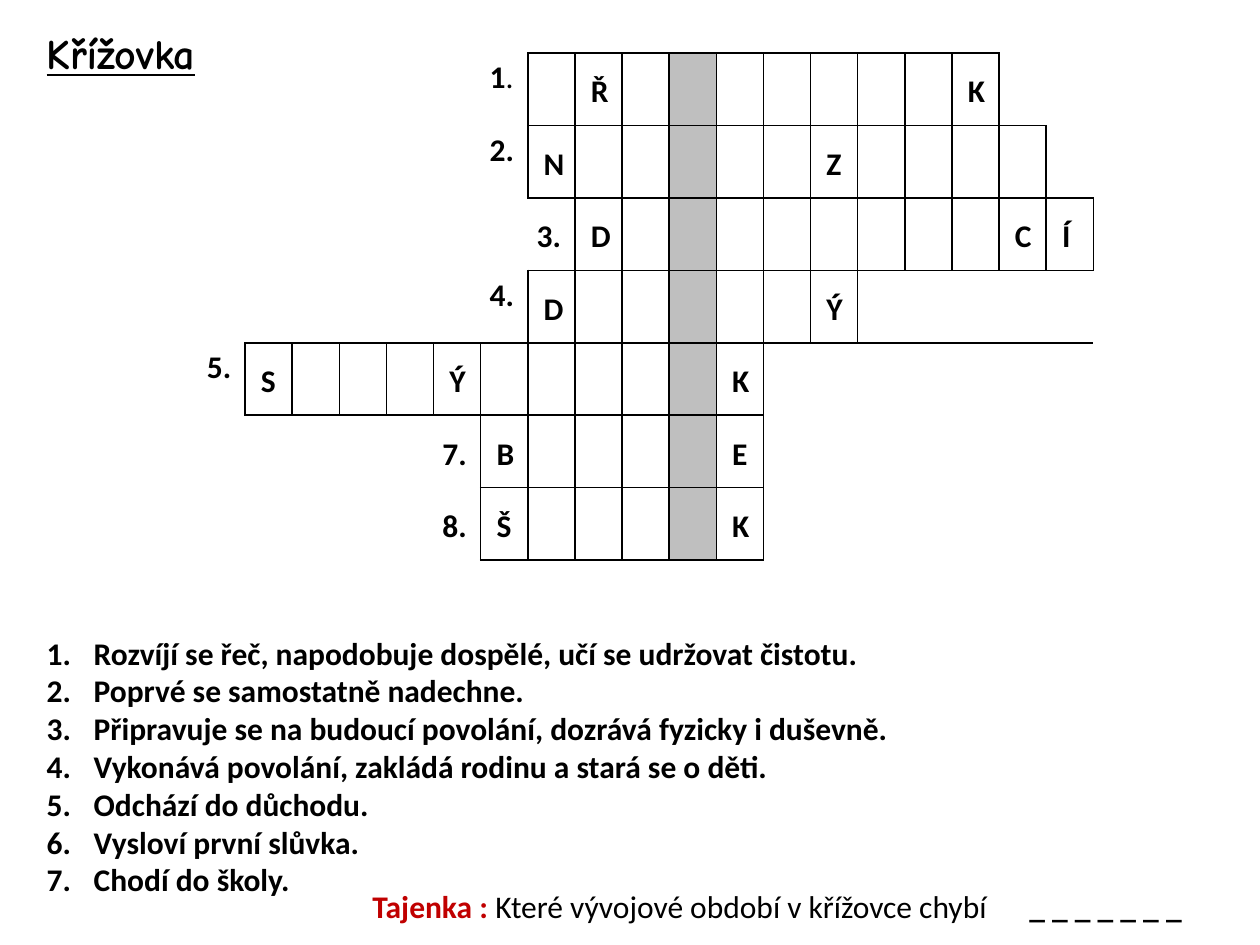
from dataclasses import dataclass

from lxml import etree
from pptx import Presentation
from pptx.dml.color import RGBColor
from pptx.enum.text import MSO_ANCHOR, MSO_AUTO_SIZE
from pptx.oxml.ns import qn
from pptx.util import Cm, Pt

TOP = MSO_ANCHOR.TOP
MIDDLE = MSO_ANCHOR.MIDDLE
GROW = MSO_AUTO_SIZE.SHAPE_TO_FIT_TEXT

BLACK, RED, GREY = "000000", "C00000", "BFBFBF"
COLUMNS, SOLUTION_COLUMN = 19, 10
COLUMN_WIDTH, ROW_HEIGHT = Cm(0.95), Cm(1.46)
SIDE_MARGIN, LETTER_MARGIN = Cm(0.18), Cm(0.32)
HANGING_INDENT = Cm(0.95)
BLANKS_TAB = Cm(13.24)


@dataclass(frozen=True)
class Word:
    number: str
    start: int
    letters: str
    number_anchor: MSO_ANCHOR = MIDDLE

    def covers(self, column: int) -> bool:
        return self.start <= column < self.start + len(self.letters)


WORDS = [
    Word("1", 7, "_Ř_______K", TOP),
    Word("2", 7, "N_____Z____", TOP),
    Word("3", 8, "D________CÍ"),
    Word("4", 7, "D_____Ý", TOP),
    Word("5", 1, "S___Ý_____K", TOP),
    Word("7", 6, "B____E"),
    Word("8", 6, "Š____K"),
]
CLUES = [
    "Rozvíjí se řeč, napodobuje dospělé, učí se udržovat čistotu.",
    "Poprvé se samostatně nadechne.",
    "Připravuje se na budoucí povolání, dozrává fyzicky i duševně.",
    "Vykonává povolání, zakládá rodinu a stará se o děti.",
    "Odchází do důchodu.",
    "Vysloví první slůvka.",
    "Chodí do školy.",
]
RULED_ROW, RULED_FROM = 3, 14


def paint(color_format, color: str) -> None:
    color_format.rgb = RGBColor.from_string(color)


def write(paragraph, text: str, *, size: float = 18, font: str = "Calibri",
          color: str = BLACK, bold: bool = True, underline: bool = False) -> None:
    run = paragraph.add_run()
    run.text = text
    run.font.size = Pt(size)
    run.font.name = font
    run.font.bold = bold
    if underline:
        run.font.underline = True
    paint(run.font.color, color)


def add_frame(slide, left: float, top: float, width: float, height: float):
    frame = slide.shapes.add_textbox(Cm(left), Cm(top), Cm(width), Cm(height)).text_frame
    frame.word_wrap = True
    frame.auto_size = GROW
    return frame


def number_paragraph(paragraph) -> None:
    properties = paragraph._p.get_or_add_pPr()
    properties.set("marL", str(HANGING_INDENT))
    properties.set("indent", str(-HANGING_INDENT))
    etree.SubElement(properties, qn("a:buFont"), typeface="+mj-lt")
    etree.SubElement(properties, qn("a:buAutoNum"), type="arabicPeriod")


def add_tab_stop(paragraph, position: int) -> None:
    tabs = etree.SubElement(paragraph._p.get_or_add_pPr(), qn("a:tabLst"))
    etree.SubElement(tabs, qn("a:tab"), pos=str(position), algn="l")


def in_word(row: int, column: int) -> bool:
    return 0 <= row < len(WORDS) and WORDS[row].covers(column)


def ruled_below(row: int, column: int) -> bool:
    return (in_word(row, column) or in_word(row + 1, column)
            or (row == RULED_ROW and column >= RULED_FROM))


def set_borders(cell, row: int, column: int) -> None:
    inside = in_word(row, column)
    sides = {
        "a:lnL": inside or in_word(row, column - 1),
        "a:lnR": inside or in_word(row, column + 1),
        "a:lnT": ruled_below(row - 1, column),
        "a:lnB": ruled_below(row, column),
    }
    properties = cell._tc.get_or_add_tcPr()
    for side, visible in sides.items():
        line = etree.SubElement(properties, qn(side), w=str(Pt(1)))
        if visible:
            fill = etree.SubElement(line, qn("a:solidFill"))
            etree.SubElement(fill, qn("a:srgbClr"), val=BLACK)
        else:
            etree.SubElement(line, qn("a:noFill"))


def fill_cell(cell, word: Word, column: int) -> None:
    cell.margin_left = cell.margin_right = SIDE_MARGIN
    cell.margin_top = cell.margin_bottom = 0
    paragraph = cell.text_frame.paragraphs[0]
    paragraph.line_spacing = 1.15
    if column == word.start - 1:
        cell.vertical_anchor = word.number_anchor
        write(paragraph, word.number)
        write(paragraph, ".", bold=word is not WORDS[0])
    elif word.covers(column):
        cell.vertical_anchor = MIDDLE
        cell.margin_left = LETTER_MARGIN
        cell.margin_right = 0
        letter = word.letters[column - word.start]
        if letter != "_":
            write(paragraph, letter)
    if column == SOLUTION_COLUMN:
        cell.fill.solid()
        paint(cell.fill.fore_color, GREY)
    else:
        cell.fill.background()


def add_crossword(slide) -> None:
    grid = slide.shapes.add_table(len(WORDS), COLUMNS, Cm(3.99), Cm(1.07),
                                  COLUMN_WIDTH * COLUMNS, ROW_HEIGHT * len(WORDS)).table
    grid.first_row = False
    grid.horz_banding = False
    for grid_column in grid.columns:
        grid_column.width = COLUMN_WIDTH
    for row, word in enumerate(WORDS):
        grid.rows[row].height = ROW_HEIGHT
        for column in range(COLUMNS):
            cell = grid.cell(row, column)
            set_borders(cell, row, column)
            fill_cell(cell, word, column)


def add_clues(slide) -> None:
    frame = add_frame(slide, 0.69, 12.65, 21.41, 5.64)
    for index, clue in enumerate(CLUES):
        paragraph = frame.add_paragraph() if index else frame.paragraphs[0]
        number_paragraph(paragraph)
        write(paragraph, clue)


def add_solution(slide) -> None:
    solution = add_frame(slide, 7.26, 17.75, 17.2, 1.02).paragraphs[0]
    add_tab_stop(solution, BLANKS_TAB)
    write(solution, "Tajenka :", color=RED)
    write(solution, " Které vývojové období v křížovce chybí", bold=False)
    write(solution, "\t_ _ _ _ _ _ _")


def main() -> None:
    presentation = Presentation()
    presentation.slide_width, presentation.slide_height = Cm(25.4), Cm(19.05)
    slide = presentation.slides.add_slide(presentation.slide_layouts[6])
    add_crossword(slide)
    heading = add_frame(slide, 0.69, 0.43, 6.6, 1.27).paragraphs[0]
    write(heading, "Křížovka", size=24, font="Comic Neue", underline=True)
    add_clues(slide)
    add_solution(slide)
    presentation.save("out.pptx")


if __name__ == "__main__":
    main()
